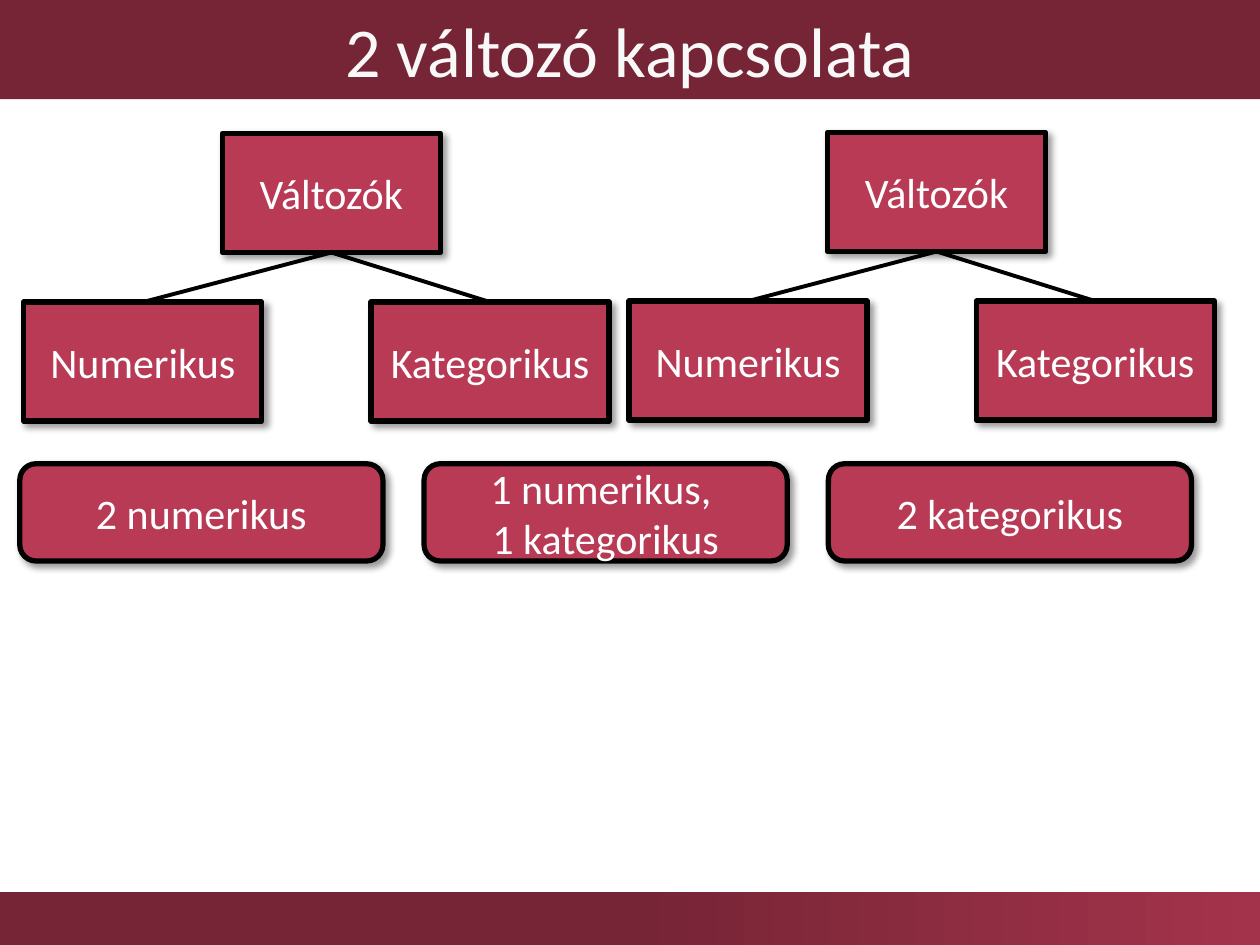
"""Build a slide that pairs two variables by their types."""
import dataclasses
import typing

import lxml.etree
import pptx
import pptx.dml.color
import pptx.enum.shapes
import pptx.enum.text
import pptx.oxml.ns
import pptx.util

Cm = pptx.util.Cm
Pt = pptx.util.Pt
Kind = pptx.enum.shapes.MSO_SHAPE
WIDTH, HEIGHT = 25.4, 19.05
DARK, LIGHT, ROSE = "762536", "A3334B", "B83A55"
BLACK, WHITE, PALE = "000000", "FFFFFF", "F8F8F8"
FRAME = {
    "word_wrap": True,
    "vertical_anchor": pptx.enum.text.MSO_ANCHOR.MIDDLE,
    "auto_size": pptx.enum.text.MSO_AUTO_SIZE.NONE,
}
TITLE_FONT = {"name": "Calibri", "size": Pt(40)}
BOX_FONT = {"name": "Calibri", "size": Pt(24)}


@dataclasses.dataclass
class Box:
    text: str
    left: float
    top: float
    width: float
    height: float
    kind: Kind = Kind.RECTANGLE


@dataclasses.dataclass
class Tree:
    left: float
    top: float


def color(value: str) -> pptx.dml.color.RGBColor:
    return pptx.dml.color.RGBColor.from_string(value)


def assign(target: typing.Any, values: dict) -> None:
    for name, value in values.items():
        setattr(target, name, value)


def write(shape: typing.Any, text: str, font: dict, ink: str) -> None:
    assign(shape.text_frame, FRAME)
    para = shape.text_frame.paragraphs[0]
    para.text = text
    para.alignment = pptx.enum.text.PP_ALIGN.CENTER
    for span in para.runs:
        assign(span.font, font)
        span.font.color.rgb = color(ink)


def add_shadow(shape: typing.Any) -> None:
    qn = pptx.oxml.ns.qn
    shape.shadow.inherit = False
    effects = shape.element.spPr.find(qn("a:effectLst"))
    shadow = lxml.etree.SubElement(
        effects, qn("a:outerShdw"), blurRad=str(Pt(4)), dist=str(Pt(3)),
        dir=str(45 * 60000), algn="tl", rotWithShape="0")
    shade = lxml.etree.SubElement(shadow, qn("a:srgbClr"), val=BLACK)
    lxml.etree.SubElement(shade, qn("a:alpha"), val="40000")


def draw_box(shapes: typing.Any, box: Box) -> None:
    shape = shapes.add_shape(
        box.kind, Cm(box.left), Cm(box.top), Cm(box.width), Cm(box.height))
    shape.fill.solid()
    shape.fill.fore_color.rgb = color(ROSE)
    shape.line.color.rgb = color(BLACK)
    shape.line.width = Pt(3)
    add_shadow(shape)
    write(shape, box.text, BOX_FONT, WHITE)


def draw_branch(shapes: typing.Any, root: Box, child: Box) -> None:
    branch = shapes.add_connector(
        pptx.enum.shapes.MSO_CONNECTOR.STRAIGHT,
        Cm(root.left + root.width / 2), Cm(root.top + root.height),
        Cm(child.left + child.width / 2), Cm(child.top))
    branch.line.color.rgb = color(BLACK)
    branch.line.width = Pt(2.25)
    lxml.etree.SubElement(
        branch.element.spPr, pptx.oxml.ns.qn("a:effectLst"))


def draw_tree(page: typing.Any, tree: Tree) -> None:
    shapes = page.shapes.add_group_shape().shapes
    root = Box("Változók", tree.left + 4, tree.top, 4.4, 2.4)
    children = [
        Box(text, tree.left + offset, tree.top + 3.4, 4.8, 2.4)
        for text, offset in (("Numerikus", 0), ("Kategorikus", 7))
    ]
    for child in reversed(children):
        draw_branch(shapes, root, child)
    for box in (root, *children):
        draw_box(shapes, box)


def draw_footer(page: typing.Any) -> None:
    band = page.shapes.add_shape(
        Kind.RECTANGLE, 0, Cm(17.98), Cm(WIDTH), Cm(HEIGHT - 17.98))
    band.shadow.inherit = False
    band.line.fill.background()
    band.fill.gradient()
    band.fill.gradient_angle = 0
    stops = ((0.5, DARK), (1, LIGHT))
    for stop, (position, value) in zip(band.fill.gradient_stops, stops):
        stop.position = position
        stop.color.rgb = color(value)


def draw_title(page: typing.Any) -> None:
    title = page.shapes.title
    assign(title, {"left": 0, "top": 0, "width": Cm(WIDTH), "height": Cm(2)})
    title.fill.solid()
    title.fill.fore_color.rgb = color(DARK)
    write(title, "2 változó kapcsolata", TITLE_FONT, PALE)


def main() -> None:
    deck = pptx.Presentation()
    assign(deck, {"slide_width": Cm(WIDTH), "slide_height": Cm(HEIGHT)})
    page = deck.slides.add_slide(deck.slide_layouts[5])
    draw_footer(page)
    draw_title(page)
    for tree in (Tree(0.48, 2.69), Tree(12.68, 2.67)):
        draw_tree(page, tree)
    pairs = ("2 numerikus", "1 numerikus, \v1 kategorikus", "2 kategorikus")
    for index, text in enumerate(pairs):
        draw_box(page.shapes, Box(
            text, 0.4 + 8.15 * index, 9.35, 7.32, 1.96,
            Kind.ROUNDED_RECTANGLE))
    deck.save("out.pptx")


if __name__ == "__main__":
    main()
